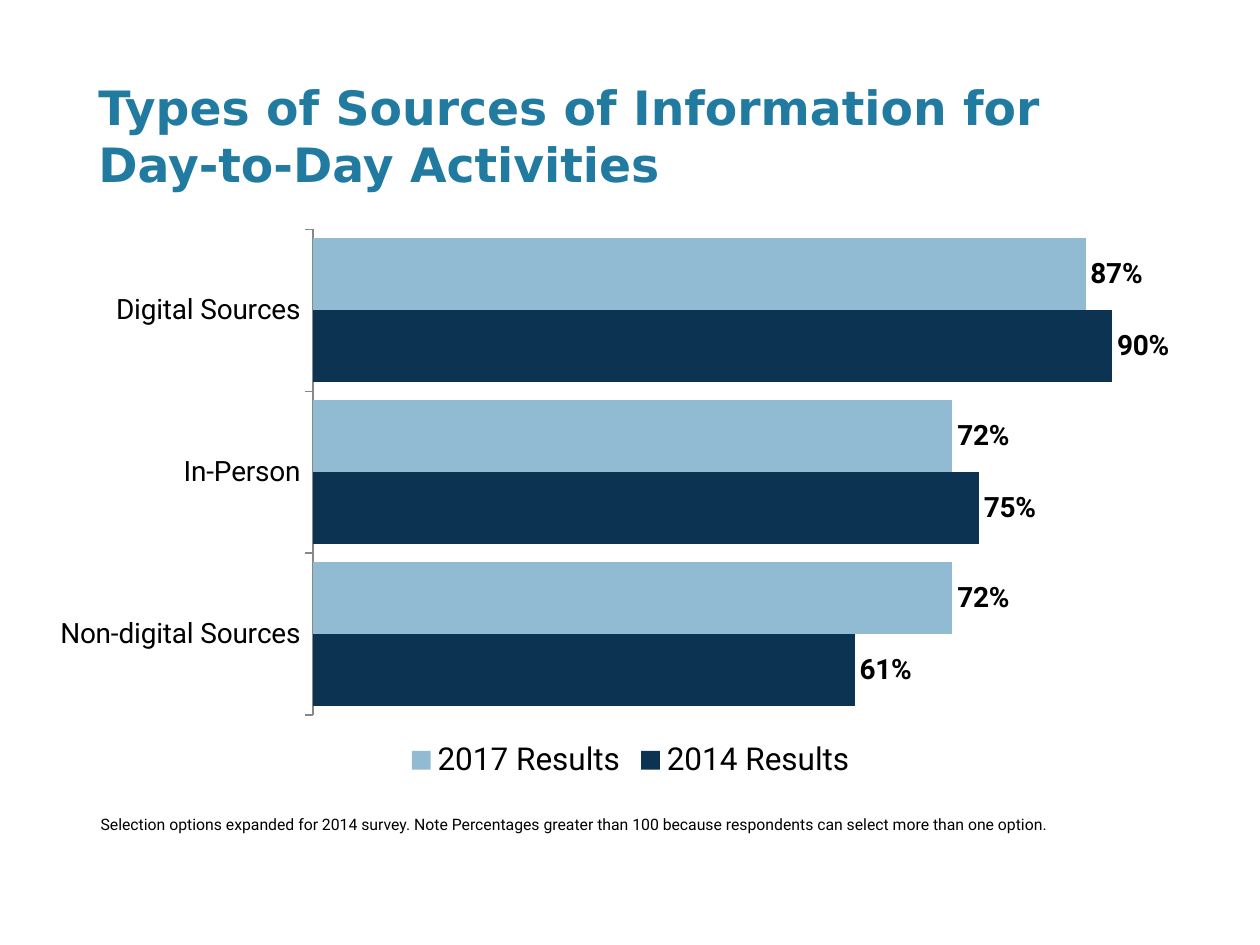
from dataclasses import dataclass

import pptx
import pptx.chart.data
import pptx.dml.color
import pptx.enum.chart
import pptx.enum.text
import pptx.util

Pt = pptx.util.Pt
BODY_FONT = "Roboto"
BLACK = "000000"


@dataclass
class TextBlock:
    text: str
    left: float
    top: float
    width: float
    height: float
    size: float
    font_name: str = BODY_FONT
    color: str = BLACK
    bold: bool = False
    left_inset: float = 7.2


@dataclass
class Series:
    name: str
    values: tuple[float, ...]
    color: str


CATEGORIES = ("Non-digital Sources", "In-Person", "Digital Sources")
SERIES = (
    Series("2014 Results", (0.61, 0.75, 0.9), "0C3351"),
    Series("2017 Results", (0.72, 0.72, 0.87), "91BAD3"),
)
TEXT_BLOCKS = (
    TextBlock("Types of Sources of Information for\vDay-to-Day Activities",
              56.2, 45.4, 653, 63.4, 27, "DejaVu Sans", "217AA0", True, 0),
    TextBlock("Selection options expanded for 2014 survey. Note Percentages greater "
              "than 100 because respondents can select more than one option.",
              50.4, 462.2, 565.2, 18, 9),
)


def rgb(value: str) -> pptx.dml.color.RGBColor:
    return pptx.dml.color.RGBColor.from_string(value)


def style_font(font, size: float, name: str = BODY_FONT,
               color: str = BLACK, bold: bool = False) -> None:
    font.size = Pt(size)
    font.name = name
    font.bold = bold
    font.color.rgb = rgb(color)


def add_text(slide, block: TextBlock) -> None:
    shape = slide.shapes.add_textbox(
        Pt(block.left), Pt(block.top), Pt(block.width), Pt(block.height))
    frame = shape.text_frame
    frame.word_wrap = True
    frame.vertical_anchor = pptx.enum.text.MSO_ANCHOR.MIDDLE
    frame.margin_left = Pt(block.left_inset)
    paragraph = frame.paragraphs[0]
    paragraph.text = block.text
    style_font(paragraph.font, block.size, block.font_name, block.color, block.bold)


def add_results_chart(slide) -> None:
    data = pptx.chart.data.CategoryChartData(number_format="0%")
    data.categories = CATEGORIES
    for series in SERIES:
        data.add_series(series.name, series.values)
    chart = slide.shapes.add_chart(
        pptx.enum.chart.XL_CHART_TYPE.BAR_CLUSTERED,
        Pt(20.9), Pt(124.6), Pt(679), Pt(324), data).chart
    style_font(chart.font, 18)
    chart.has_title = False

    # Legend
    chart.has_legend = True
    chart.legend.position = pptx.enum.chart.XL_LEGEND_POSITION.BOTTOM
    chart.legend.include_in_layout = False
    style_font(chart.legend.font, 18)

    # Axes
    category_axis = chart.category_axis
    category_axis.major_tick_mark = pptx.enum.chart.XL_TICK_MARK.OUTSIDE
    category_axis.format.line.color.rgb = rgb("888888")
    category_axis.format.line.width = Pt(0.75)
    style_font(category_axis.tick_labels.font, 16)
    value_axis = chart.value_axis
    value_axis.minimum_scale = 0
    value_axis.maximum_scale = 1
    value_axis.has_major_gridlines = False
    value_axis.visible = False

    # Bars and value labels
    plot = chart.plots[0]
    plot.gap_width = 25
    plot.overlap = 0
    plot.vary_by_categories = False
    for bars, series in zip(plot.series, SERIES):
        bars.format.fill.solid()
        bars.format.fill.fore_color.rgb = rgb(series.color)
        labels = bars.data_labels
        labels.show_value = True
        labels.number_format = "0%"
        labels.number_format_is_linked = False
        labels.position = pptx.enum.chart.XL_LABEL_POSITION.OUTSIDE_END
        style_font(labels.font, 16, bold=True)


def main() -> None:
    presentation = pptx.Presentation()
    presentation.slide_width = Pt(720)
    presentation.slide_height = Pt(540)
    slide = presentation.slides.add_slide(presentation.slide_layouts[6])
    title, footnote = TEXT_BLOCKS
    add_text(slide, title)
    add_results_chart(slide)
    add_text(slide, footnote)
    presentation.save("out.pptx")


if __name__ == "__main__":
    main()
